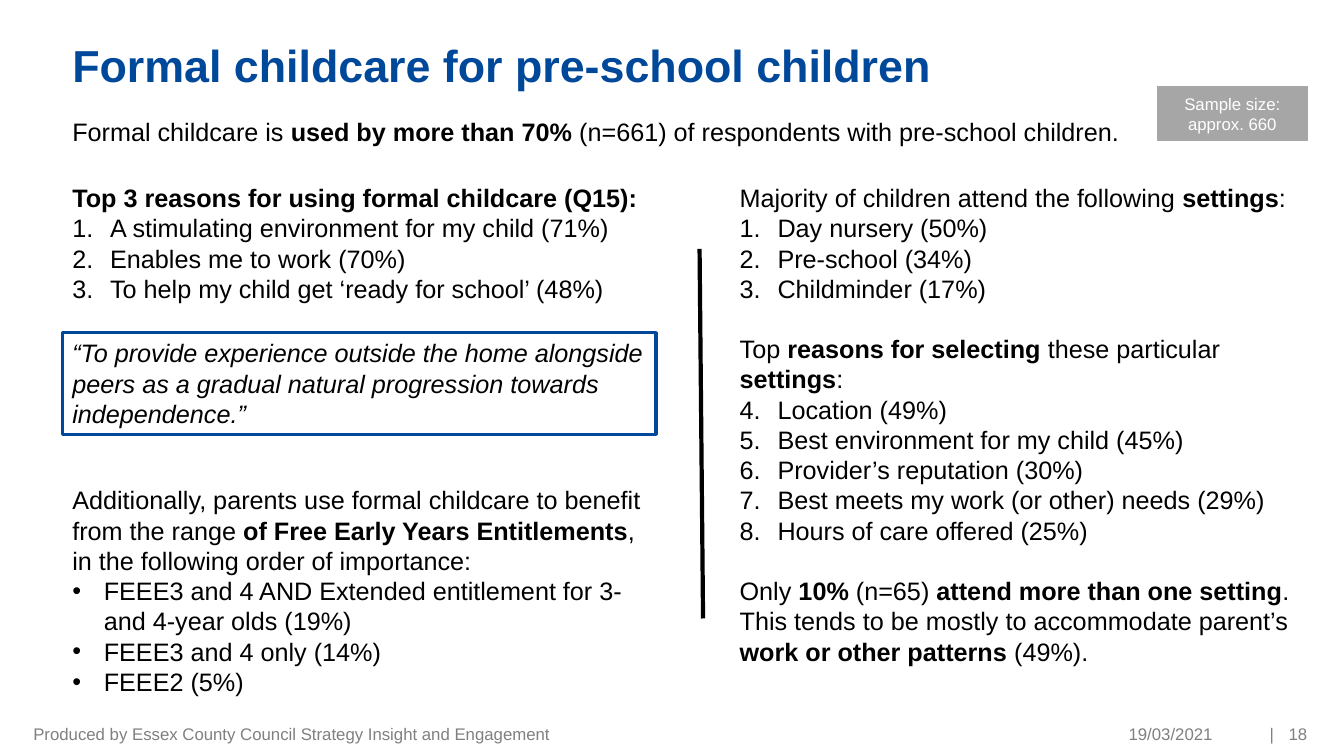
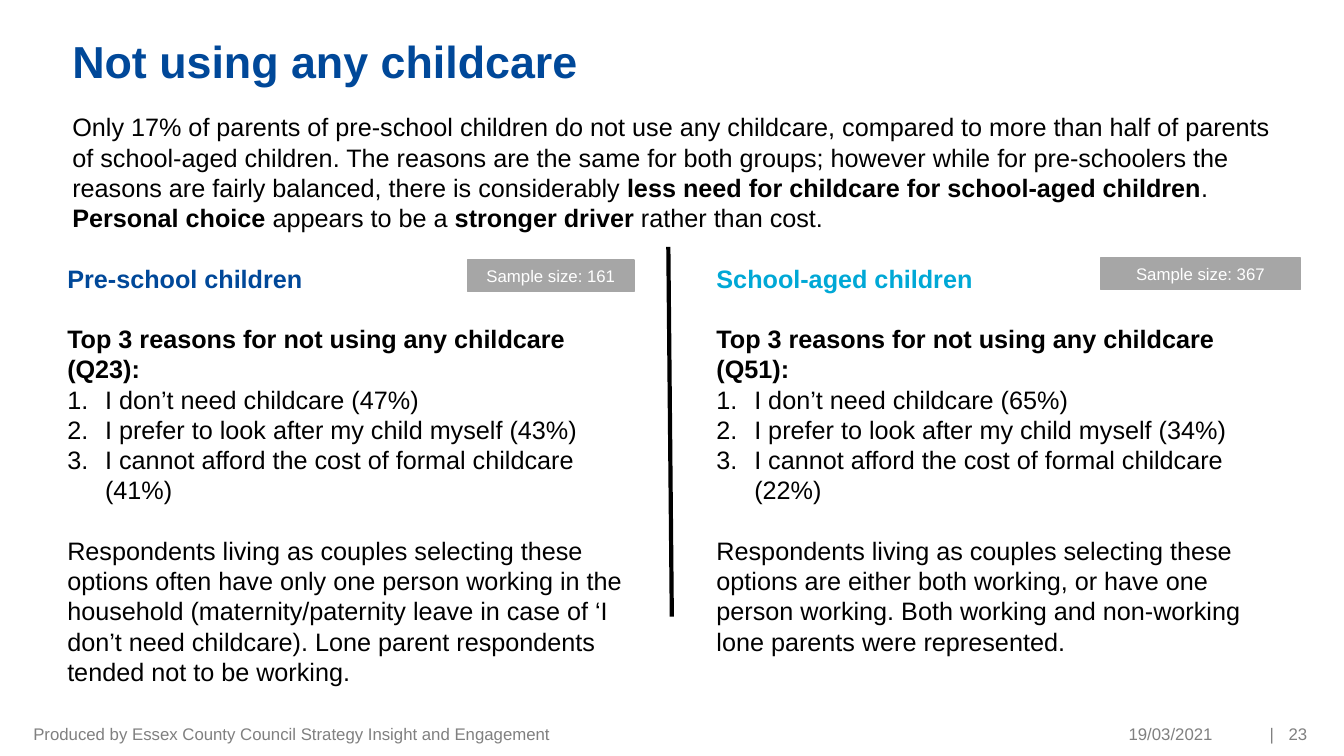
from lxml import etree
from pptx import Presentation
from pptx.dml.color import RGBColor
from pptx.enum.shapes import MSO_CONNECTOR, MSO_SHAPE
from pptx.enum.text import MSO_ANCHOR, PP_ALIGN
from pptx.oxml.ns import qn
from pptx.util import Pt

RECTANGLE = MSO_SHAPE.RECTANGLE
STRAIGHT = MSO_CONNECTOR.STRAIGHT
TOP, MIDDLE = MSO_ANCHOR.TOP, MSO_ANCHOR.MIDDLE
LEFT, CENTER, RIGHT = PP_ALIGN.LEFT, PP_ALIGN.CENTER, PP_ALIGN.RIGHT

COLORS = {
    "title": "004899",
    "body": "000000",
    "school": "00A8D6",
    "footer": "808080",
    "tag": "A6A6A6",
    "tag_text": "FFFFFF",
}
FONT = "Arial"
BODY_SIZE, SMALL_SIZE = 18, 12
LINE = 1.2 * BODY_SIZE
INSETS = (7.2, 3.6, 7.2, 3.6)
MARGIN = 44.6
TITLE_WIDTH = 745
DATE = "19/03/2021"
PRODUCER = "Produced by Essex County Council Strategy Insight and Engagement"


def rgb(name):
    return RGBColor.from_string(COLORS[name])


def apply(target, values):
    for name, value in values.items():
        setattr(target, name, value)


# Text: "**" switches bold on and off within a paragraph
def para(text, gap=0, color="body", marker=None, start=1):
    return {"text": text, "gap": gap, "color": color, "marker": marker, "start": start}


def numbered(*items, start=1):
    return [para(item, marker="number", start=start) for item in items]


def bulleted(*items):
    return [para(item, marker="bullet") for item in items]


def set_marker(paragraph, marker, start):
    props = paragraph._p.get_or_add_pPr()
    indent = Pt(27 if marker == "number" else 22.5)
    props.set("marL", str(indent))
    props.set("indent", str(-indent))
    etree.SubElement(props, qn("a:buFont"), typeface=FONT)
    if marker == "number":
        number = etree.SubElement(props, qn("a:buAutoNum"), type="arabicPeriod")
        if start > 1:
            number.set("startAt", str(start))
    else:
        etree.SubElement(props, qn("a:buChar"), char="•")


def write(shape, paras, size=BODY_SIZE, align=LEFT, anchor=TOP, insets=INSETS,
          spacing=None, bold=False, italic=False):
    frame = shape.text_frame
    sides = ("margin_left", "margin_top", "margin_right", "margin_bottom")
    apply(frame, {"word_wrap": True, "vertical_anchor": anchor,
                  **{side: Pt(inset) for side, inset in zip(sides, insets)}})
    for index, item in enumerate(paras):
        paragraph = frame.add_paragraph() if index else frame.paragraphs[0]
        apply(paragraph, {"alignment": align, "space_before": Pt(item["gap"]),
                          "line_spacing": spacing or Pt(1.2 * size)})
        if item["marker"]:
            set_marker(paragraph, item["marker"], item["start"])
        for part, piece in enumerate(item["text"].split("**")):
            if piece:
                run = paragraph.add_run()
                run.text = piece
                apply(run.font, {"name": FONT, "size": Pt(size),
                                 "bold": bold or part % 2 == 1, "italic": italic})
                run.font.color.rgb = rgb(item["color"])


# Elements
def add_text(slide, box, paras, **style):
    write(slide.shapes.add_textbox(*map(Pt, box)), paras, **style)


def add_box(slide, box, paras, line, width, fill=None, **style):
    shape = slide.shapes.add_shape(RECTANGLE, *map(Pt, box))
    shape.shadow.inherit = False
    if fill:
        shape.fill.solid()
        shape.fill.fore_color.rgb = rgb(fill)
    else:
        shape.fill.background()
    shape.line.color.rgb = rgb(line)
    shape.line.width = Pt(width)
    write(shape, paras, **style)


def add_sample_tag(slide, box, text):
    add_box(slide, box, [para(text, color="tag_text")], "tag", 1, fill="tag",
            size=SMALL_SIZE, align=CENTER, anchor=MIDDLE)


def add_divider(slide, left, top):
    divider = slide.shapes.add_connector(
        STRAIGHT, Pt(left), Pt(top), Pt(left + 2.5), Pt(top + 264))
    divider.line.color.rgb = rgb("body")
    divider.line.width = Pt(3)
    etree.SubElement(divider._element.spPr, qn("a:effectLst"))


def add_footer(slide, number):
    for left, width, text, align in (
        (23.8, 453.6, PRODUCER, LEFT),
        (693.4, 172.8, DATE, RIGHT),
        (890, 20, "|", RIGHT),
        (910, 23.8, number, RIGHT),
    ):
        add_text(slide, (left, 519, width, 11), [para(text, color="footer")],
                 size=SMALL_SIZE, align=align, anchor=MIDDLE, insets=(0, 3.6, 0, 3.6))


def add_page(deck, title, top, number):
    slide = deck.slides.add_slide(deck.slide_layouts[6])
    add_text(slide, (MARGIN, top, TITLE_WIDTH, 65.5), [para(title, color="title")],
             size=32, bold=True, spacing=0.9, insets=(7.2, 3.6, 7.2, 0))
    add_footer(slide, number)
    return slide


# Slides
def build_formal_childcare(deck):
    slide = add_page(deck, "Formal childcare for pre-school children", 28, "18")
    add_text(slide, (MARGIN, 79.2, 828, 29), [para(
        "Formal childcare is **used by more than 70% **(n=661) of respondents "
        "with pre-school children.")])
    add_divider(slide, 499.7, 177.8)
    add_text(slide, (MARGIN, 126.7, 424, 399.6), [
        para("**Top 3 reasons for using formal childcare (Q15):**"),
        *numbered("A stimulating environment for my child (71%)",
                  "Enables me to work (70%)",
                  "To help my child get ‘ready for school’ (48%)"),
        para("Additionally, parents use formal childcare to benefit from the range "
             "**of Free Early Years Entitlements**, in the following order of "
             "importance:", gap=6 * LINE),
        *bulleted("FEEE3 and 4 AND Extended entitlement for 3- and 4-year olds (19%)",
                  "FEEE3 and 4 only (14%)",
                  "FEEE2 (5%)"),
    ])
    add_box(slide, (MARGIN, 237.6, 424, 72.7), [para(
        "“To provide experience outside the home alongside peers as a gradual "
        "natural progression towards independence.”")], "title", 2.25, italic=True)
    add_text(slide, (521.3, 126.7, 412.6, 378), [
        para("Majority of children attend the following **settings**:"),
        *numbered("Day nursery (50%)", "Pre-school (34%)", "Childminder (17%)"),
        para("Top **reasons for selecting **these particular **settings**:", gap=LINE),
        *numbered("Location (49%)",
                  "Best environment for my child (45%)",
                  "Provider’s reputation (30%)",
                  "Best meets my work (or other) needs (29%)",
                  "Hours of care offered (25%)", start=4),
        para("Only **10% **(n=65) **attend more than one setting**. This tends to be "
             "mostly to accommodate parent’s **work or other patterns **(49%).",
             gap=LINE),
    ])
    add_sample_tag(slide, (826.6, 61.9, 107.3, 38.2), "Sample size: approx. 660")


def add_group(slide, left, heading, color, question, shares, comment):
    reasons = ("I don’t need childcare", "I prefer to look after my child myself",
               "I cannot afford the cost of formal childcare")
    add_text(slide, (left, 184.3, 417.6, 312.5), [
        para(f"**{heading}**", color=color),
        para(f"**Top 3 reasons for not using any childcare ({question}):**", gap=LINE),
        *numbered(*(f"{reason} ({share}%)" for reason, share in zip(reasons, shares))),
        para(comment, gap=LINE),
    ])


def build_no_childcare(deck):
    slide = add_page(deck, "Not using any childcare", 25.2, "23")
    add_text(slide, (MARGIN, 76.3, 879, 94.3), [para(
        "Only 17% of parents of pre-school children do not use any childcare, compared "
        "to more than half of parents of school-aged children. The reasons are the same "
        "for both groups; however while for pre-schoolers the reasons are fairly "
        "balanced, there is considerably **less need for childcare for school-aged "
        "children**. **Personal choice **appears to be a **stronger driver **rather "
        "than cost.")])
    add_divider(slide, 477.4, 176.4)
    add_sample_tag(slide, (334.1, 185.8, 118.8, 22.3), "Sample size: 161")
    add_sample_tag(slide, (786.2, 184.3, 142.6, 22.3), "Sample size: 367")
    add_group(slide, 41, "Pre-school children", "title", "Q23", (47, 43, 41),
              "Respondents living as couples selecting these options often have only one "
              "person working in the household (maternity/paternity leave in case of ‘I "
              "don’t need childcare). Lone parent respondents tended not to be working.")
    add_group(slide, 504.7, "School-aged children", "school", "Q51", (65, 34, 22),
              "Respondents living as couples selecting these options are either both "
              "working, or have one person working. Both working and non-working lone "
              "parents were represented.")


def main():
    deck = Presentation()
    apply(deck, {"slide_width": Pt(960), "slide_height": Pt(540)})
    build_formal_childcare(deck)
    build_no_childcare(deck)
    deck.save("out.pptx")


if __name__ == "__main__":
    main()
